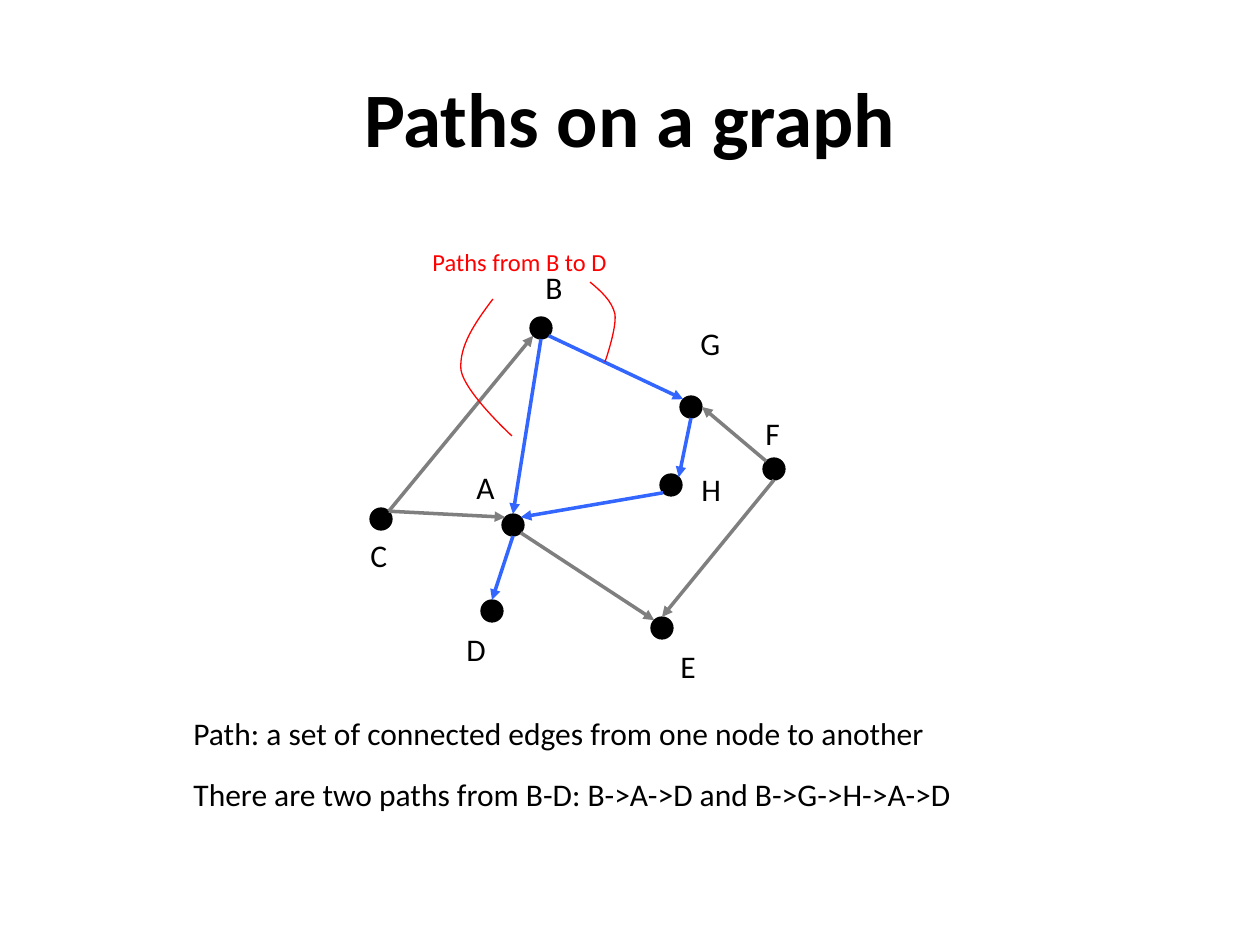
from math import cos, radians, sin

from lxml import etree
from pptx import Presentation
from pptx.dml.color import RGBColor
from pptx.enum.shapes import MSO_CONNECTOR, MSO_SHAPE
from pptx.enum.text import MSO_ANCHOR, PP_ALIGN
from pptx.oxml.ns import qn
from pptx.util import Emu, Pt

BLACK = RGBColor(0x00, 0x00, 0x00)
GRAY = RGBColor(0x7F, 0x7F, 0x7F)
BLUE = RGBColor(0x33, 0x66, 0xFF)
RED = RGBColor(0xFF, 0x00, 0x00)

SCALE = 914400 / 126  # EMU per px
NODE_SIZE = 22

# node: (centre, top left of its label)
NODES = {
    "A": ((513, 525), (464, 462)),
    "B": ((541, 328), (533, 262)),
    "C": ((381, 519), (358, 530)),
    "D": ((492, 611), (454, 624)),
    "E": ((662, 628), (668, 641)),
    "F": ((774, 469), (753, 408)),
    "G": ((691, 407), (688, 318)),
    "H": ((671, 485), (689, 464)),
}

# compass side of a node -> angle, clockwise from east
SIDES = {"E": 0, "SE": 45, "S": 90, "SW": 135, "NW": 225, "N": 270, "NE": 315}

# (from node, side, to node, side, colour)
EDGES = [
    ("C", "NE", "B", "SW", GRAY),
    ("C", "NE", "A", "NW", GRAY),
    ("B", "S", "A", "N", BLUE),
    ("B", "SE", "G", "NW", BLUE),
    ("G", "S", "H", "NE", BLUE),
    ("H", "SW", "A", "NE", BLUE),
    ("A", "S", "D", "N", BLUE),
    ("A", "SE", "E", "NW", GRAY),
    ("F", "NW", "G", "E", GRAY),
    ("F", "S", "E", "N", GRAY),
]

# start point, then three Bezier points for each curve segment
CALLOUT_CURVES = [
    [(590, 282), (601, 291), (612, 301), (615, 314), (617, 328), (605, 362), (605, 362)],
    [(493, 299), (475, 323), (459, 346), (461, 370), (465, 393), (512, 436), (512, 436)],
]

TITLE = ("Paths on a graph", (63, 38, 1134, 158))
CALLOUT = ("Paths from B to D", (420, 241, 203, 43))
NOTES = [
    ("Path: a set of connected edges from one node to another", (181, 708, 912, 50)),
    ("There are two paths from B-D: B->A->D and B->G->H->A->D", (181, 769, 912, 50)),
]


def px(value):
    return Emu(round(value * SCALE))


def add_text(slide, text, box, size=18, color=BLACK, bold=False, wrap=False,
             align=PP_ALIGN.LEFT, anchor=MSO_ANCHOR.TOP):
    frame = slide.shapes.add_textbox(*map(px, box)).text_frame
    frame.word_wrap = wrap
    frame.vertical_anchor = anchor
    paragraph = frame.paragraphs[0]
    paragraph.text = text
    paragraph.alignment = align
    font = paragraph.runs[0].font
    for name, value in {"name": "Calibri", "size": Pt(size), "bold": bold}.items():
        setattr(font, name, value)
    font.color.rgb = color


def add_node(slide, center):
    corner = [px(c - NODE_SIZE / 2) for c in center]
    node = slide.shapes.add_shape(MSO_SHAPE.OVAL, *corner, px(NODE_SIZE), px(NODE_SIZE))
    node.shadow.inherit = False
    node.fill.solid()
    node.fill.fore_color.rgb = BLACK
    node.line.color.rgb = BLACK
    node.line.width = Pt(0.75)


def rim_point(node, side):
    (x, y), _ = NODES[node]
    angle = radians(SIDES[side])
    return px(x + NODE_SIZE / 2 * cos(angle)), px(y + NODE_SIZE / 2 * sin(angle))


def add_edge(slide, start, start_side, end, end_side, color):
    edge = slide.shapes.add_connector(
        MSO_CONNECTOR.STRAIGHT, *rim_point(start, start_side), *rim_point(end, end_side))
    edge.line.color.rgb = color
    edge.line.width = Pt(2)
    etree.SubElement(edge.line._get_or_add_ln(), qn("a:tailEnd"), type="triangle")
    etree.SubElement(edge._element.spPr, qn("a:effectLst"))


def add_curve(slide, points):
    """Draw the points as a freeform, then turn each three lines into one Bezier."""
    builder = slide.shapes.build_freeform(*points[0], scale=SCALE)
    builder.add_line_segments(points[1:], close=False)
    curve = builder.convert_to_shape()
    curve.shadow.inherit = False
    curve.fill.background()
    curve.line.color.rgb = RED
    curve.line.width = Pt(0.75)
    lines = list(curve._element.iter(qn("a:lnTo")))
    outline = lines[0].getparent()
    for i in range(0, len(lines), 3):
        bezier = etree.SubElement(outline, qn("a:cubicBezTo"))
        for line in lines[i:i + 3]:
            bezier.append(line[0])
            outline.remove(line)


def main():
    prs = Presentation()
    prs.slide_width, prs.slide_height = px(1260), px(945)
    slide = prs.slides.add_slide(prs.slide_layouts[6])

    add_text(slide, *TITLE, size=44, bold=True, wrap=True,
             align=PP_ALIGN.CENTER, anchor=MSO_ANCHOR.MIDDLE)
    for label, (center, label_corner) in NODES.items():
        add_node(slide, center)
        add_text(slide, label, (*label_corner, 44, 50))
    for edge in EDGES:
        add_edge(slide, *edge)
    add_text(slide, *CALLOUT, size=14, color=RED)
    for points in CALLOUT_CURVES:
        add_curve(slide, points)
    for note in NOTES:
        add_text(slide, *note, wrap=True)

    prs.save("out.pptx")


if __name__ == "__main__":
    main()
